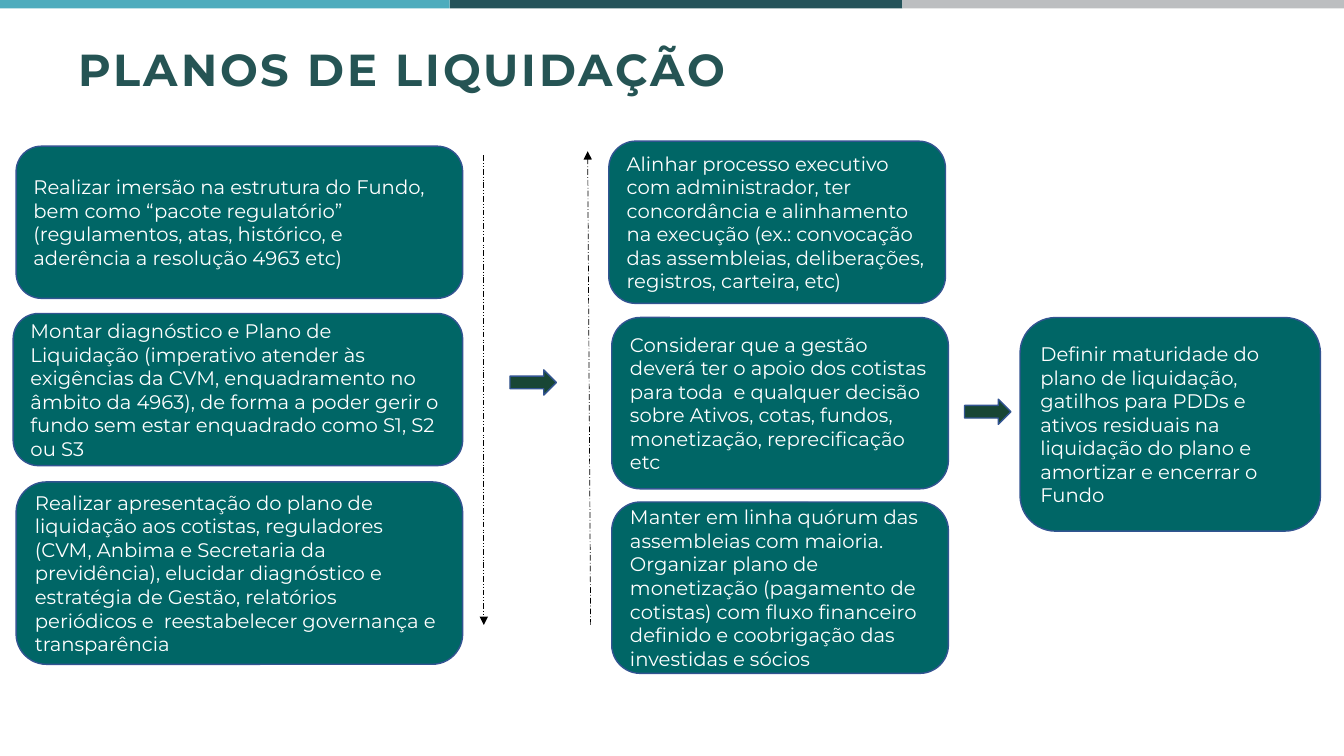
from lxml import etree
from pptx import Presentation
from pptx.dml.color import RGBColor
from pptx.enum.dml import MSO_LINE
from pptx.enum.shapes import MSO_CONNECTOR, MSO_SHAPE
from pptx.enum.text import MSO_ANCHOR, MSO_AUTO_SIZE, PP_ALIGN
from pptx.oxml.ns import qn
from pptx.util import Pt

RECT = MSO_SHAPE.RECTANGLE
ROUNDED = MSO_SHAPE.ROUNDED_RECTANGLE
ARROW = MSO_SHAPE.RIGHT_ARROW
STRAIGHT = MSO_CONNECTOR.STRAIGHT
DASH_DOT = MSO_LINE.LONG_DASH_DOT
DASH_DOT_DOT = MSO_LINE.DASH_DOT_DOT
LEFT = PP_ALIGN.LEFT
TOP, MIDDLE = MSO_ANCHOR.TOP, MSO_ANCHOR.MIDDLE
NO_FIT = MSO_AUTO_SIZE.NONE

FONT = "Montserrat"
OUTLINE = "325491"
TITLE = "PLANOS DE LIQUIDAÇÃO"
BAR_COLORS = ["4EACBD", "25535A", "BCBEC0"]
BAR_LEFT, BAR_WIDTH, BAR_HEIGHT = -2, 323.3, 8

STEPS = [
    ((11.5, 104.4, 319, 108.7),
     ["Realizar imersão na estrutura do Fundo, bem como “pacote regulatório” "
      "(regulamentos, atas, histórico, e aderência a resolução 4963 etc)"]),
    ((9.4, 223.9, 321.1, 108.7),
     ["Montar diagnóstico e Plano de Liquidação (imperativo atender às exigências "
      "da CVM, enquadramento no âmbito da 4963), de forma a poder gerir o fundo "
      "sem estar enquadrado como S1, S2 ou S3"]),
    ((11.5, 344.2, 319, 130.3),
     ["Realizar apresentação do plano de liquidação aos cotistas, reguladores "
      "(CVM, Anbima e Secretaria da previdência), elucidar diagnóstico e "
      "estratégia de Gestão, relatórios periódicos e  reestabelecer governança "
      "e transparência"]),
    ((434.9, 100.8, 240.5, 115.9),
     ["Alinhar processo executivo com administrador, ter concordância e "
      "alinhamento na execução (ex.: convocação das assembleias, deliberações, "
      "registros, carteira, etc)"]),
    ((437, 226.8, 240.5, 122.4),
     ["Considerar que a gestão deverá ter o apoio dos cotistas para toda  e "
      "qualquer decisão sobre Ativos, cotas, fundos, monetização, "
      "reprecificação etc"]),
    ((437, 358.6, 240.5, 122.4),
     ["Manter em linha quórum das assembleias com maioria.",
      "Organizar plano de monetização (pagamento de cotistas) com fluxo "
      "financeiro definido e coobrigação das investidas e sócios"]),
    ((728.6, 226.8, 214.6, 152.6),
     ["Definir maturidade do plano de liquidação, gatilhos para PDDs e ativos "
      "residuais na liquidação do plano e amortizar e encerrar o Fundo"]),
]
ARROWS = [(364.3, 264.2, 33.1, 18), (689, 285.1, 33.1, 18)]
GUIDES = [
    ((345.6, 110.9, 345.6, 446.4), DASH_DOT_DOT),
    ((421.9, 446.4, 419.8, 108), DASH_DOT),
]


def rgb(value):
    return RGBColor.from_string(value)


def add_block(slide, kind, box, fill, line=None):
    sp = slide.shapes.add_shape(kind, *map(Pt, box))
    sp.shadow.inherit = False
    sp.fill.solid()
    sp.fill.fore_color.rgb = rgb(fill)
    if line:
        sp.line.color.rgb = rgb(line)
        sp.line.width = Pt(1)
    else:
        sp.line.fill.background()
    return sp


def write(sp, lines, size, color, anchor, bold=False):
    tf = sp.text_frame
    tf.text = "\n".join(lines)
    tf.word_wrap = True
    tf.auto_size = NO_FIT
    tf.vertical_anchor = anchor
    for p in tf.paragraphs:
        p.alignment = LEFT
        for r in p.runs:
            r.font.name = FONT
            r.font.size = Pt(size)
            r.font.bold = bold
            r.font.color.rgb = rgb(color)


def add_guide(slide, ends, dash):
    cxn = slide.shapes.add_connector(STRAIGHT, *map(Pt, ends))
    cxn.line.color.rgb = rgb("000000")
    cxn.line.width = Pt(0.5)
    cxn.line.dash_style = dash
    props = cxn._element.spPr
    etree.SubElement(props.find(qn("a:ln")), qn("a:tailEnd"), type="triangle")
    etree.SubElement(props, qn("a:effectLst"))


def add_title(slide):
    title = slide.shapes.title
    title.left, title.top, title.width, title.height = map(Pt, (49, 26, 562.3, 46))
    write(title, [TITLE], 32, "255454", TOP, True)
    r = title.text_frame.paragraphs[0].runs[0]
    r._r.get_or_add_rPr().set("spc", "200")


def main():
    prs = Presentation()
    prs.slide_width, prs.slide_height = Pt(960), Pt(540)
    slide = prs.slides.add_slide(prs.slide_layouts[5])
    for i, color in enumerate(BAR_COLORS):
        left = BAR_LEFT + i * BAR_WIDTH
        add_block(slide, RECT, (left, -2, BAR_WIDTH, BAR_HEIGHT), color)
    add_title(slide)
    for box, lines in STEPS:
        sp = add_block(slide, ROUNDED, box, "006666", OUTLINE)
        write(sp, lines, 14, "FFFFFF", MIDDLE)
    for box in ARROWS:
        add_block(slide, ARROW, box, "184635", OUTLINE)
    for ends, dash in GUIDES:
        add_guide(slide, ends, dash)
    prs.save("out.pptx")


if __name__ == "__main__":
    main()
